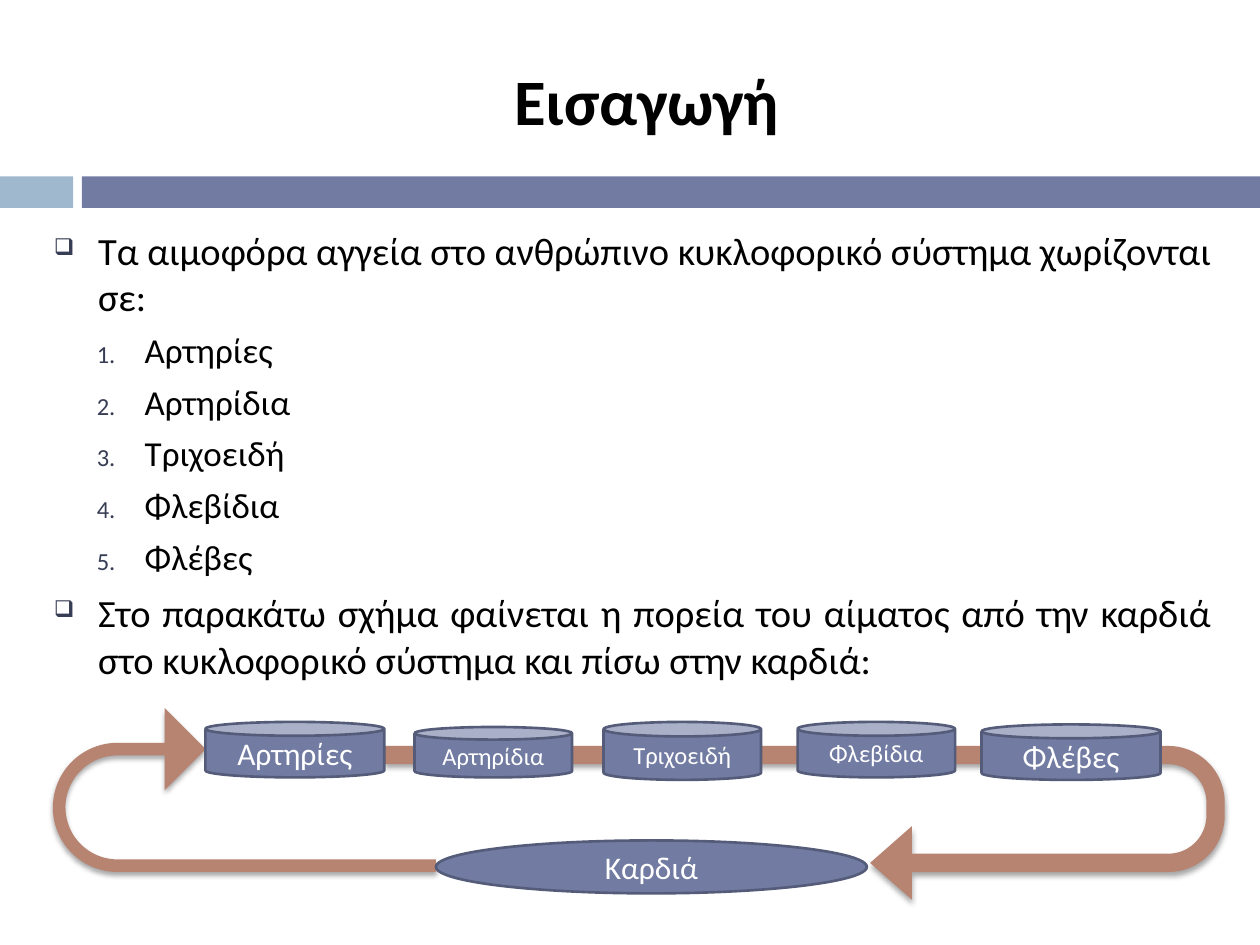
import pptx
import pptx.util
import pptx.dml.color
import pptx.enum.shapes
import pptx.enum.text
import pptx.oxml
import pptx.oxml.ns
from lxml import etree

Inches = pptx.util.Inches
Pt = pptx.util.Pt
SHAPES = pptx.enum.shapes.MSO_SHAPE
ALIGN = pptx.enum.text.PP_ALIGN
MIDDLE = pptx.enum.text.MSO_ANCHOR.MIDDLE

COLORS = {"text": "000000", "label": "FFFFFF", "bullet": "373D54", "accent": "9FB8CD",
          "main": "727CA3", "outline": "545C79", "flow": "B88472"}
VESSELS = ["Αρτηρίες", "Αρτηρίδια", "Τριχοειδή", "Φλεβίδια", "Φλέβες"]


def rgb(name):
    return pptx.dml.color.RGBColor.from_string(COLORS[name])


def write(paragraph, text, size, color, align, bold=False):
    paragraph.alignment = align
    run = paragraph.add_run()
    run.text = text
    for key, value in {"name": "Calibri", "size": Pt(size), "bold": bold}.items():
        setattr(run.font, key, value)
    run.font.color.rgb = rgb(color)


def add_filled(slide, kind, box, fill, outline=None):
    shape = slide.shapes.add_shape(kind, *(Inches(value) for value in box))
    shape.shadow.inherit = False
    shape.fill.solid()
    shape.fill.fore_color.rgb = rgb(fill)
    if outline:
        shape.line.color.rgb = rgb(outline)
        shape.line.width = Pt(1.5)
    else:
        shape.line.fill.background()
    return shape


def add_labelled(slide, kind, box, text, size):
    shape = add_filled(slide, kind, box, "main", "outline")
    shape.text_frame.vertical_anchor = MIDDLE
    write(shape.text_frame.paragraphs[0], text, size, "label", ALIGN.CENTER)


def add_title(slide, box, text):
    title = slide.shapes.title
    for key, value in zip(("left", "top", "width", "height"), box):
        setattr(title, key, Inches(value))
    title.text_frame.vertical_anchor = MIDDLE
    write(title.text_frame.paragraphs[0], text, 37, "text", ALIGN.CENTER, True)


def add_band(slide, box):
    left, top, width, height = box
    split, gap = 0.58, 0.07
    add_filled(slide, SHAPES.RECTANGLE, (left, top, split, height), "accent")
    start = left + split + gap
    add_filled(slide, SHAPES.RECTANGLE, (start, top, left + width - start, height), "main")


def set_bullet(paragraph, level, margin, hanging, percent, marker):
    properties = paragraph._p.get_or_add_pPr()
    for key, value in {"lvl": level, "marL": Inches(margin), "indent": -Inches(hanging)}.items():
        properties.set(key, str(int(value)))
    namespace = pptx.oxml.ns.nsdecls("a")
    for xml in (f'<a:buClr {namespace}><a:srgbClr val="{COLORS["bullet"]}"/></a:buClr>',
                f'<a:buSzPct {namespace} val="{percent * 1000}"/>',
                marker.format(namespace)):
        properties.append(pptx.oxml.parse_xml(xml))


def add_body(slide, box):
    frame = slide.shapes.add_textbox(*(Inches(value) for value in box)).text_frame
    frame.word_wrap = True
    point = (22, 7, (0, 0.35, 0.35, 60, '<a:buChar {} char="❑"/>'))
    item = (20, 5.5, (1, 0.72, 0.38, 70, '<a:buAutoNum {} type="arabicPeriod"/>'))
    lines = [("Τα αιμοφόρα αγγεία στο ανθρώπινο κυκλοφορικό σύστημα χωρίζονται σε:", point)]
    lines += [(vessel, item) for vessel in VESSELS]
    lines.append(("Στο παρακάτω σχήμα φαίνεται η πορεία του αίματος από την καρδιά "
                  "στο κυκλοφορικό σύστημα και πίσω στην καρδιά:", point))
    for index, (text, (size, space, bullet)) in enumerate(lines):
        paragraph = frame.add_paragraph() if index else frame.paragraphs[0]
        write(paragraph, text, size, "text", ALIGN.JUSTIFY)
        paragraph.space_before = Pt(space)
        set_bullet(paragraph, *bullet)


def add_turn(slide, box, rotation, adjustments):
    # The box is the visible one; a quarter turn swaps its sides about the centre
    left, top, width, height = box
    shift = (width - height) / 2
    shape = add_filled(slide, SHAPES.U_TURN_ARROW,
                       (left + shift, top - shift, height, width), "flow")
    shape.rotation = rotation
    for index, value in enumerate(adjustments):
        shape.adjustments[index] = value
    effects = shape._element.spPr.find(pptx.oxml.ns.qn("a:effectLst"))
    effects.append(pptx.oxml.parse_xml(
        f'<a:outerShdw {pptx.oxml.ns.nsdecls("a")} blurRad="{Pt(3)}" dist="{Pt(2)}" '
        'dir="5400000" rotWithShape="0"><a:srgbClr val="000000">'
        '<a:alpha val="35000"/></a:srgbClr></a:outerShdw>'))


def add_circulation(slide, box):
    left, top, width, height = box
    # Flow from the heart and back to it
    add_turn(slide, (left, top, 3.04, 1.3), 270, (0.077, 0.25, 0.25, 0.438, 0.399))
    add_turn(slide, (left + width - 6.67, top + height - 1.22, 6.67, 1.22), 90,
             (0.119, 0.239, 0.272, 0.368, 0.422))
    add_labelled(slide, SHAPES.OVAL, (left + 3.04, top + 1.05, 3.42, 0.42), "Καρδιά", 18)
    # Vessels: offset from the box, size and text size
    places = [(1.21, 0.11, 1.42, 0.44, 18), (2.87, 0.15, 1.25, 0.4, 14),
              (4.37, 0.11, 1.25, 0.46, 14), (5.91, 0.11, 1.25, 0.44, 14),
              (7.37, 0.13, 1.42, 0.44, 18)]
    for vessel, (x, y, can_width, can_height, size) in zip(VESSELS, places):
        add_labelled(slide, SHAPES.CAN, (left + x, top + y, can_width, can_height), vessel, size)


def main():
    presentation = pptx.Presentation()
    presentation.slide_width = Inches(10)
    presentation.slide_height = Inches(7.5)
    slide = presentation.slides.add_slide(presentation.slide_layouts[5])
    add_band(slide, (0, 1.4, 10, 0.25))
    add_body(slide, (0.33, 1.75, 9.38, 5.67))
    add_circulation(slide, (0.42, 5.62, 9.3, 1.52))
    add_title(slide, (0.67, 0.25, 8.92, 1.08), "Εισαγωγή")
    presentation.save("out.pptx")


if __name__ == "__main__":
    main()
